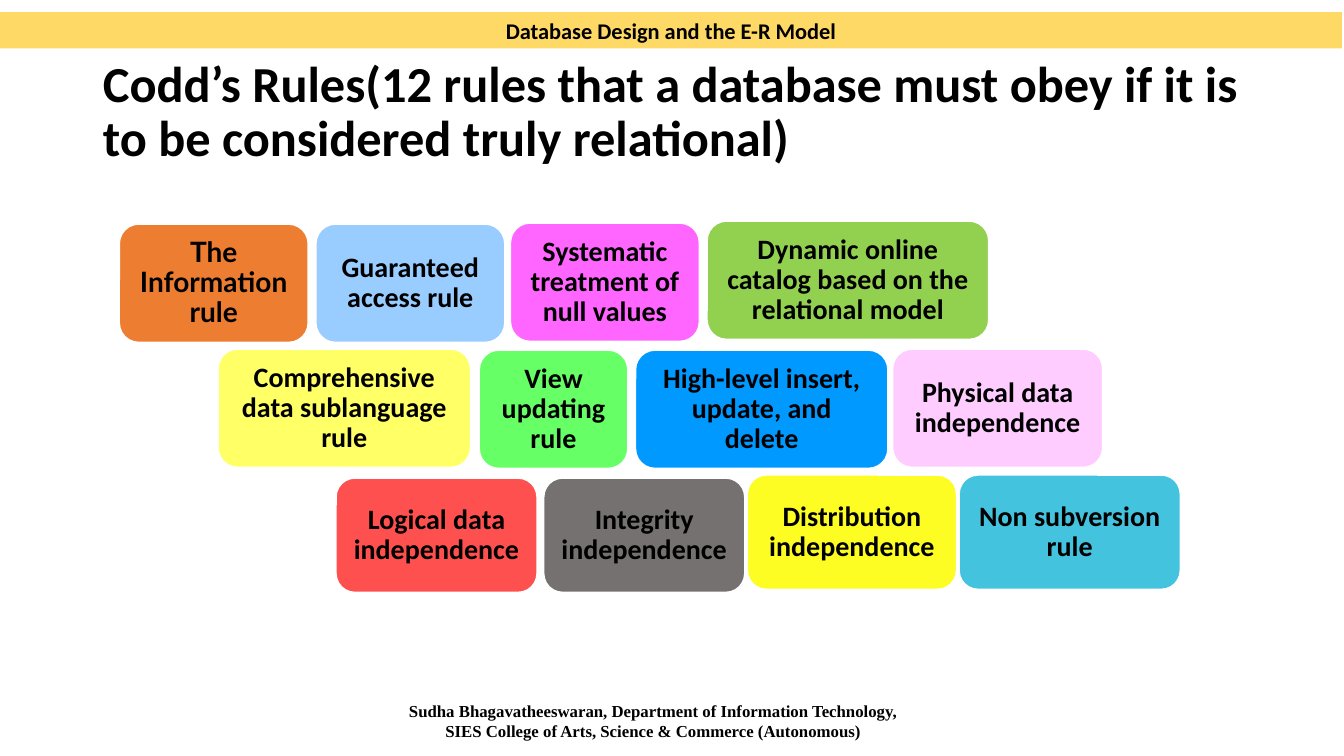
from pptx import Presentation
from pptx.dml.color import RGBColor
from pptx.enum.shapes import MSO_SHAPE
from pptx.enum.text import MSO_ANCHOR, MSO_AUTO_SIZE, PP_ALIGN
from pptx.util import Pt

RECT, ROUNDED = MSO_SHAPE.RECTANGLE, MSO_SHAPE.ROUNDED_RECTANGLE
LEFT, CENTER = PP_ALIGN.LEFT, PP_ALIGN.CENTER
TOP, MIDDLE = MSO_ANCHOR.TOP, MSO_ANCHOR.MIDDLE
NO_AUTOFIT = MSO_AUTO_SIZE.NONE

PX = 9144  # EMU per px, 100 px to the inch
BODY_FONT = "Calibri"
FIRST_RULE_FONT = "Lato"
FOOTER_FONT = "Times New Roman"
BLACK, WHITE, BANNER_FILL = "000000", "FFFFFF", "FFD966"

TITLE = "Codd’s Rules(12 rules that a database must obey if it is to be considered truly relational)"
BANNER = "Database Design and the E-R Model"
FOOTER = [
    "Sudha Bhagavatheeswaran, Department of Information Technology,",
    "SIES College of Arts, Science & Commerce (Autonomous)",
]

# Each row: card height, then cards as (text, fill, left, top, width)
RULE_ROWS = [
    (118, [
        ("The Information rule", "ED7D31", 118, 222, 188),
        ("Guaranteed access rule", "99CCFF", 313, 222, 188),
        ("Systematic treatment of null values", "FF66FF", 506, 221, 188),
        ("Dynamic online catalog based on the relational model", "92D050", 701, 219, 280),
    ]),
    (118, [
        ("Comprehensive data sublanguage rule", "FFFF66", 216, 346, 251),
        ("View updating rule", "66FF66", 475, 347, 148),
        ("High-level insert, update, and delete", "0099FF", 630, 347, 251),
        ("Physical data independence", "FFCCFF", 885, 346, 209),
    ]),
    (114, [
        ("Logical data independence", "FF5050", 333, 474, 200),
        ("Integrity independence", "767171", 539, 474, 200),
        ("Distribution independence", "FDFD23", 741, 471, 208),
        ("Non subversion rule", "43C3DD", 951, 471, 220),
    ]),
]


def px(*lengths):
    return [round(length * PX) for length in lengths]


def color(hex_code):
    return RGBColor.from_string(hex_code)


def write(shape, text, size, font=BODY_FONT, align=CENTER, anchor=MIDDLE,
          spacing=None, insets=(10, 5)):
    """Fill a shape with bold black text; a list gives one paragraph per item."""
    frame = shape.text_frame
    frame.word_wrap = True
    frame.auto_size = NO_AUTOFIT
    frame.vertical_anchor = anchor
    side, end = px(*insets)
    frame.margin_left = frame.margin_right = side
    frame.margin_top = frame.margin_bottom = end
    lines = [text] if isinstance(text, str) else text
    for index, line in enumerate(lines):
        paragraph = frame.add_paragraph() if index else frame.paragraphs[0]
        paragraph.alignment = align
        if spacing:
            paragraph.line_spacing = spacing
        run = paragraph.add_run()
        run.text = line
        run.font.name = font
        run.font.size = Pt(size)
        run.font.bold = True
        run.font.color.rgb = color(BLACK)


def add_block(slide, kind, box, fill, outline=None):
    block = slide.shapes.add_shape(kind, *px(*box))
    block.shadow.inherit = False
    block.fill.solid()
    block.fill.fore_color.rgb = color(fill)
    if outline:
        block.line.color.rgb = color(outline)
        block.line.width = Pt(1.5)
    else:
        block.line.fill.background()
    return block


def main():
    deck = Presentation()
    deck.slide_width, deck.slide_height = px(1333, 750)
    slide = deck.slides.add_slide(deck.slide_layouts[5])

    title = slide.shapes.title
    title.left, title.top, title.width, title.height = px(92, 40, 1150, 145)
    write(title, TITLE, 36, align=LEFT, spacing=0.9)

    banner = add_block(slide, RECT, (0, 12, 1331, 36), BANNER_FILL)
    write(banner, BANNER, 16)

    footer = slide.shapes.add_textbox(*px(315, 690, 666, 50))
    write(footer, FOOTER, 12, font=FOOTER_FONT, anchor=TOP)

    for row, (height, rules) in enumerate(RULE_ROWS):
        # Rounded corners already push the text in by about 5% of the height
        corner_inset = 0.05 * height
        for column, (rule, fill, left, top, width) in enumerate(rules):
            card = add_block(slide, ROUNDED, (left, top, width, height), fill, WHITE)
            font = FIRST_RULE_FONT if row == column == 0 else BODY_FONT
            # Side insets grow with the card so that wide cards wrap earlier
            side_inset = 10 + 0.034 * width - corner_inset
            write(card, rule, 20, font=font, spacing=0.9, insets=(side_inset, 5))

    deck.save("out.pptx")


if __name__ == "__main__":
    main()
